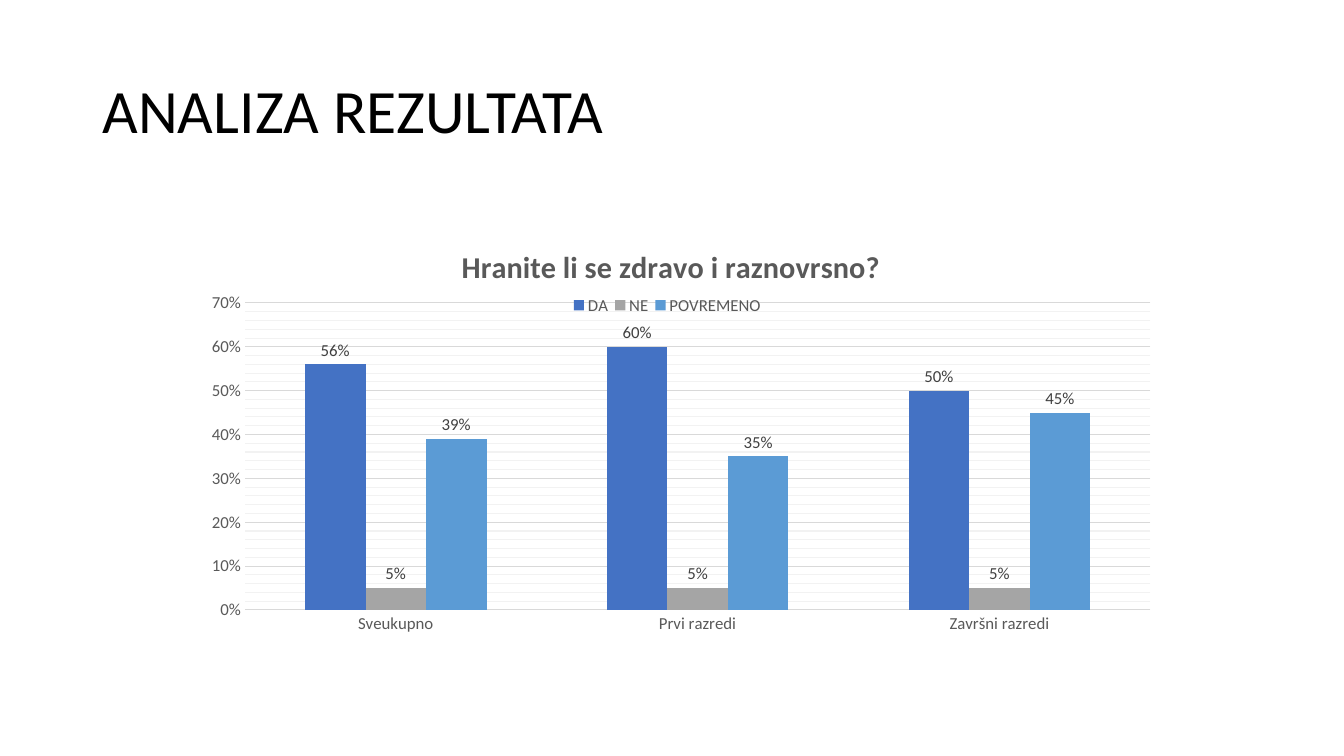
from copy import deepcopy

from lxml import etree
from pptx import Presentation
from pptx.chart.data import CategoryChartData
from pptx.dml.color import RGBColor
from pptx.enum.chart import XL_CHART_TYPE, XL_LABEL_POSITION, XL_LEGEND_POSITION, XL_TICK_MARK
from pptx.enum.text import MSO_ANCHOR
from pptx.oxml.ns import qn
from pptx.util import Inches, Pt

COLUMNS = XL_CHART_TYPE.COLUMN_CLUSTERED
OUTSIDE_END = XL_LABEL_POSITION.OUTSIDE_END
LEGEND_TOP = XL_LEGEND_POSITION.TOP
NO_TICK = XL_TICK_MARK.NONE
MIDDLE = MSO_ANCHOR.MIDDLE

FONT = "Calibri"
GREY_TEXT = "595959"
GRID = "D9D9D9"
MINOR_GRID = "F2F2F2"
CATEGORIES = ["Sveukupno", "Prvi razredi", "Završni razredi"]
ANSWERS = [
    ("DA", [0.56, 0.60, 0.50], "4472C4"),
    ("NE", [0.05, 0.05, 0.05], "A5A5A5"),
    ("POVREMENO", [0.39, 0.35, 0.45], "5B9BD5"),
]


def rgb(value):
    return RGBColor.from_string(value)


def set_font(font, size, color, bold=False):
    font.name = FONT
    font.size = Pt(size)
    font.bold = bold
    font.color.rgb = rgb(color)


def set_line(line, color):
    line.color.rgb = rgb(color)
    line.width = Pt(0.75)


def place(chart, tag, after, **values):
    """Give a chart part a manual layout, in fractions of the chart's size."""
    part = chart.element.find(".//" + qn(tag))
    for old in part.findall(qn("c:layout")):
        part.remove(old)
    layout = etree.Element(qn("c:layout"))
    manual = etree.SubElement(layout, qn("c:manualLayout"))
    if tag == "c:plotArea":
        etree.SubElement(manual, qn("c:layoutTarget")).set("val", "inner")
    for mode in ("xMode", "yMode"):
        etree.SubElement(manual, qn("c:" + mode)).set("val", "edge")
    for name, value in values.items():
        etree.SubElement(manual, qn("c:" + name)).set("val", str(value))
    if after:
        part.find(qn(after)).addnext(layout)
    else:
        part.insert(0, layout)


def add_heading(slide, text):
    box = slide.shapes.add_textbox(Inches(0.92), Inches(0.4), Inches(11.5), Inches(1.45))
    tf = box.text_frame
    tf.word_wrap = True
    tf.vertical_anchor = MIDDLE
    tf.text = text
    p = tf.paragraphs[0]
    p.line_spacing = 0.9
    set_font(p.runs[0].font, 44, "000000")


def color_minor_gridlines(chart, color):
    """Reuse the major gridlines' line style in another colour."""
    major = chart.element.find(".//" + qn("c:majorGridlines"))
    minor = chart.element.find(".//" + qn("c:minorGridlines"))
    style = deepcopy(major.find(qn("c:spPr")))
    style.find(".//" + qn("a:srgbClr")).set("val", color)
    minor.append(style)


def format_axes(chart):
    for axis in (chart.category_axis, chart.value_axis):
        axis.major_tick_mark = axis.minor_tick_mark = NO_TICK
        set_font(axis.tick_labels.font, 12, GREY_TEXT)
    set_line(chart.category_axis.format.line, GRID)

    axis = chart.value_axis
    axis.minimum_scale, axis.maximum_scale = 0, 0.7
    axis.major_unit, axis.minor_unit = 0.1, 0.02
    axis.has_major_gridlines = axis.has_minor_gridlines = True
    set_line(axis.major_gridlines.format.line, GRID)
    color_minor_gridlines(chart, MINOR_GRID)
    axis.format.line.fill.background()
    axis.tick_labels.number_format = "0%"
    axis.tick_labels.number_format_is_linked = False


def format_series(series, color):
    series.format.fill.solid()
    series.format.fill.fore_color.rgb = rgb(color)
    labels = series.data_labels
    labels.show_value = True
    labels.number_format = "0%"
    labels.number_format_is_linked = False
    labels.position = OUTSIDE_END
    set_font(labels.font, 12, "404040")


def add_answer_chart(slide, title):
    data = CategoryChartData(number_format="0%")
    data.categories = CATEGORIES
    for name, values, _ in ANSWERS:
        data.add_series(name, values)
    chart = slide.shapes.add_chart(
        COLUMNS, Inches(1.63), Inches(2.2), Inches(9.98), Inches(4.48), data).chart
    set_font(chart.font, 10, "000000")

    tf = chart.chart_title.text_frame
    tf.text = title
    set_font(tf.paragraphs[0].runs[0].font, 21.6, GREY_TEXT, bold=True)

    chart.has_legend = True
    chart.legend.position = LEGEND_TOP
    chart.legend.include_in_layout = False
    set_font(chart.legend.font, 12, GREY_TEXT)

    plot = chart.plots[0]
    plot.gap_width = 199
    plot.overlap = 0
    plot.vary_by_categories = False
    for series, (_, _, color) in zip(plot.series, ANSWERS):
        format_series(series, color)
    format_axes(chart)

    place(chart, "c:title", "c:tx", x=0.29, y=0.04)
    place(chart, "c:legend", "c:legendPos", x=0.4, y=0.16, w=0.2, h=0.05)
    place(chart, "c:plotArea", None, x=0.08, y=0.18, w=0.9, h=0.68)


def main():
    prs = Presentation()
    prs.slide_width, prs.slide_height = Inches(13.33), Inches(7.5)
    slide = prs.slides.add_slide(prs.slide_layouts[6])
    add_heading(slide, "ANALIZA REZULTATA")
    add_answer_chart(slide, "Hranite li se zdravo i raznovrsno?")
    prs.save("out.pptx")


if __name__ == "__main__":
    main()
